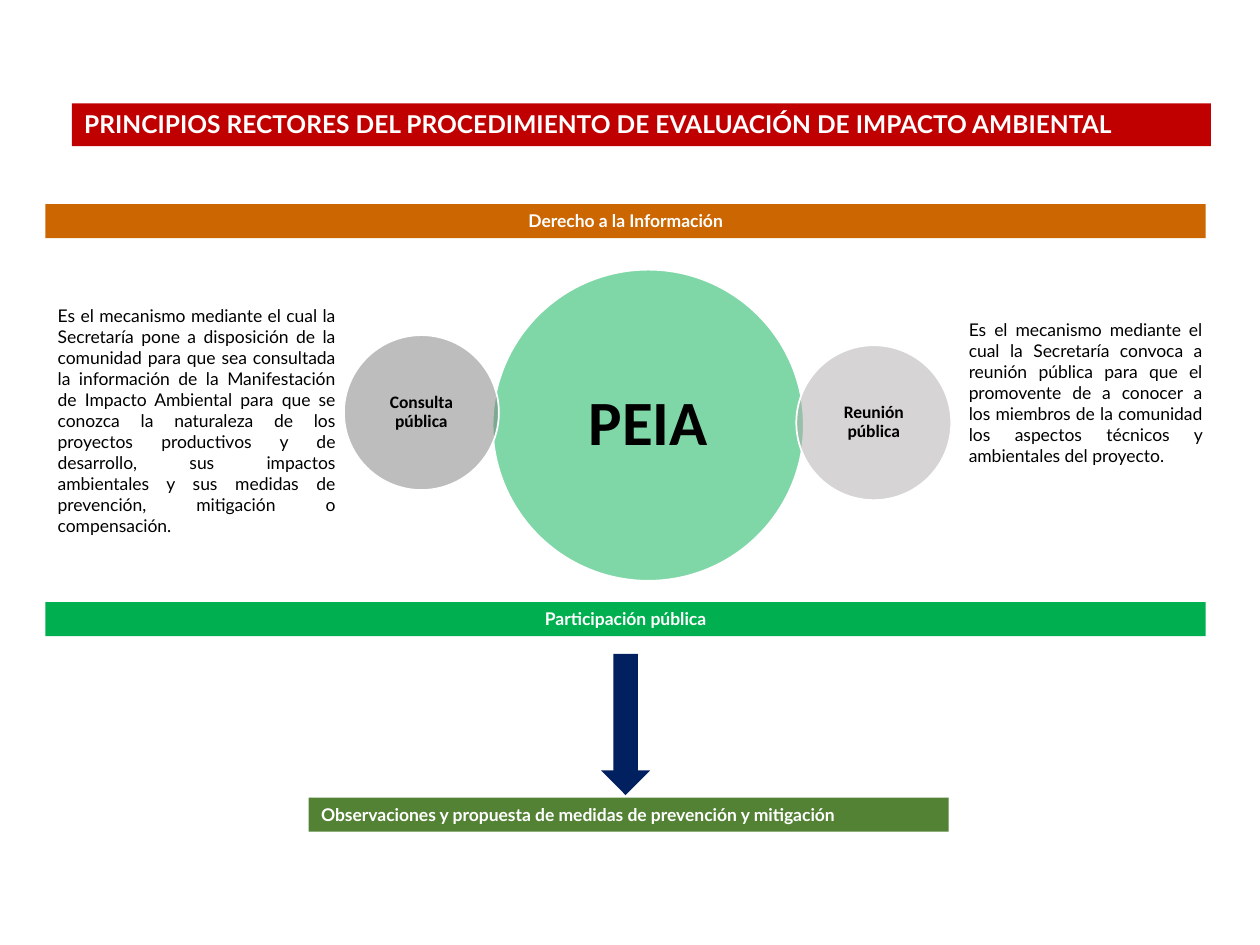
from lxml import etree
from pptx import Presentation
from pptx.dml.color import RGBColor
from pptx.enum.shapes import MSO_SHAPE as SHAPE
from pptx.enum.text import MSO_ANCHOR as ANCHOR, PP_ALIGN as ALIGN
from pptx.oxml.ns import qn
from pptx.util import Inches, Pt

COLORS = {
    "white": "FFFFFF", "black": "000000", "red": "C00000", "orange": "CC6600",
    "green": "00B050", "olive": "548235", "navy": "002060",
    "gray": "7C7C7C", "light_gray": "AFABAB",
}

prs = Presentation()
prs.slide_width, prs.slide_height = Inches(10), Inches(7.5)
s = prs.slides.add_slide(prs.slide_layouts[6])
COL, ROW = prs.slide_width / 100, prs.slide_height / 75


def add_shape(kind, col, row, cols, rows, color):
    sp = s.shapes.add_shape(kind, int(col * COL), int(row * ROW), int(cols * COL), int(rows * ROW))
    sp.shadow.inherit = False
    sp.fill.solid()
    sp.fill.fore_color.rgb = RGBColor.from_string(COLORS[color])
    sp.line.fill.background()
    return sp


def set_text(sp, text, size, font, color, bold, align, anchor):
    tf = sp.text_frame
    tf.word_wrap = True
    tf.vertical_anchor = anchor
    p = tf.paragraphs[0]
    p.text = text
    p.alignment = align
    r = p.runs[0]
    r.font.size, r.font.name, r.font.bold = Pt(size), font, bold
    r.font.color.rgb = RGBColor.from_string(COLORS[color])
    return tf


circles = [
    ("PEIA", 39.1, 21.4, 24.7, "green", 36, 0.05),
    ("Consulta pública", 27.3, 26.6, 12.3, "gray", 10, 0.01),
    ("Reunión pública", 63.2, 27.4, 12.3, "light_gray", 10, 0.01),
]
for text, col, row, size, color, pt, inset in circles:
    sp = add_shape(SHAPE.OVAL, col, row, size, size, color)
    clr = sp.fill._xPr.find(qn("a:solidFill"))[0]
    etree.SubElement(clr, qn("a:alpha"), val="50000")
    sp.line.color.rgb = RGBColor.from_string(COLORS["white"])
    sp.line.width = Pt(1)
    tf = set_text(sp, text, pt, "Calibri", "black", True, ALIGN.CENTER, ANCHOR.MIDDLE)
    tf.margin_left = tf.margin_right = tf.margin_top = tf.margin_bottom = Inches(inset)
    tf.paragraphs[0].line_spacing = 0.9

bars = [
    ("PRINCIPIOS RECTORES DEL PROCEDIMIENTO DE EVALUACIÓN DE IMPACTO AMBIENTAL",
     5.7, 8.2, 90.4, 3.4, "red", 14, ALIGN.LEFT),
    ("Derecho a la Información", 3.6, 16.2, 92.1, 2.7, "orange", 10, ALIGN.CENTER),
    ("Participación pública", 3.6, 47.8, 92.1, 2.7, "green", 10, ALIGN.CENTER),
    ("Observaciones y propuesta de medidas de prevención y mitigación",
     24.5, 63.3, 50.8, 2.7, "olive", 10, ALIGN.LEFT),
]
for text, col, row, cols, rows, color, pt, align in bars:
    sp = add_shape(SHAPE.RECTANGLE, col, row, cols, rows, color)
    set_text(sp, text, pt, "Lato", "white", True, align, ANCHOR.TOP)

notes = [
    ("Es el mecanismo mediante el cual la Secretaría pone a disposición de la comunidad "
     "para que sea consultada la información de la Manifestación de Impacto Ambiental "
     "para que se conozca la naturaleza de los proyectos productivos y de desarrollo, "
     "sus impactos ambientales y sus medidas de prevención, mitigación o compensación.",
     3.6, 23.7, 24, 19.5),
    ("Es el mecanismo mediante el cual la Secretaría convoca a reunión pública para que "
     "el promovente de a conocer a los miembros de la comunidad los aspectos técnicos y "
     "ambientales del proyecto.",
     75.9, 24.8, 20.5, 14.5),
]
for text, col, row, cols, rows in notes:
    sp = s.shapes.add_textbox(int(col * COL), int(row * ROW), int(cols * COL), int(rows * ROW))
    set_text(sp, text, 10, "Lato", "black", False, ALIGN.JUSTIFY, ANCHOR.TOP)

add_shape(SHAPE.DOWN_ARROW, 47.7, 51.9, 3.9, 11.2, "navy")

prs.save("out.pptx")
